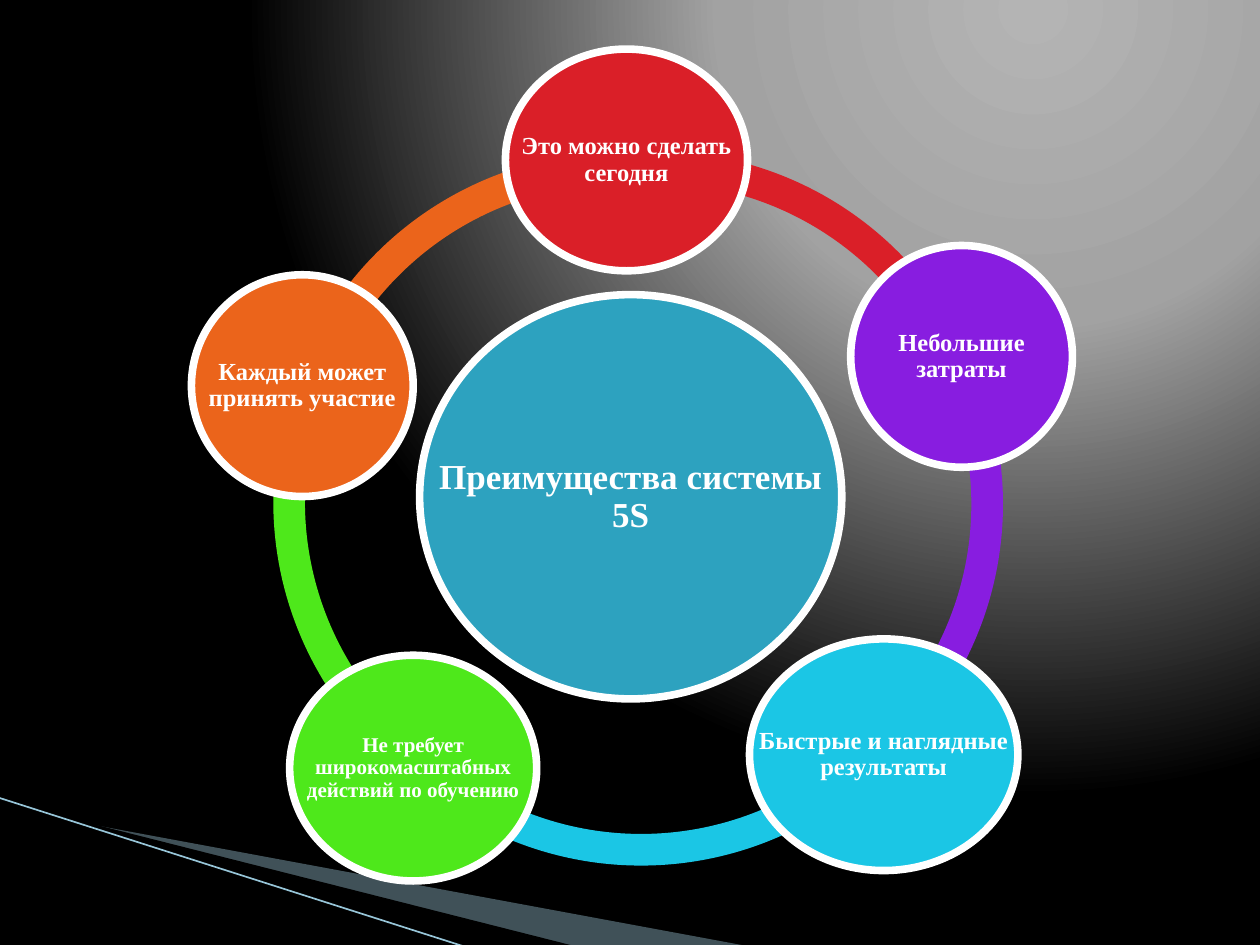
from lxml import etree
from pptx import Presentation
from pptx.dml.color import RGBColor
from pptx.enum.shapes import MSO_CONNECTOR, MSO_SHAPE
from pptx.enum.text import MSO_ANCHOR, PP_ALIGN
from pptx.oxml import parse_xml
from pptx.oxml.ns import nsdecls, qn
from pptx.util import Cm, Pt

STRAIGHT = MSO_CONNECTOR.STRAIGHT
ELLIPSE = MSO_SHAPE.OVAL
BLOCK_ARC = MSO_SHAPE.BLOCK_ARC
MIDDLE = MSO_ANCHOR.MIDDLE
CENTER = PP_ALIGN.CENTER

WHITE = RGBColor(0xFF, 0xFF, 0xFF)
BLACK = RGBColor(0x00, 0x00, 0x00)
RED = RGBColor(0xDA, 0x1F, 0x28)
PURPLE = RGBColor(0x88, 0x1D, 0xE0)
CYAN = RGBColor(0x1B, 0xC6, 0xE5)
GREEN = RGBColor(0x4E, 0xE8, 0x1B)
ORANGE = RGBColor(0xEB, 0x64, 0x1B)
TEAL = RGBColor(0x2D, 0xA2, 0xBF)
PALE_BLUE = RGBColor(0xA0, 0xCB, 0xDC)
LINE_BLUE = RGBColor(0x97, 0xC5, 0xD8)


class RingSlide:
    """Holds the slide and the style of the ring diagram."""

    font_name = "Times New Roman"
    outline = Pt(4.33)
    arc_size = Cm(13.87)
    arc_thickness = 0.046

    def __init__(self, slide):
        self.slide = slide
        self.shapes = slide.shapes

    def background(self, stops, left, top, right, bottom):
        """Radial gradient; stops and focus sides are in percent."""
        stop_xml = "".join(
            f'<a:gs pos="{pos * 1000}"><a:srgbClr val="{color}"/></a:gs>'
            for pos, color in stops
        )
        self.slide.element.cSld.insert(0, parse_xml(
            f'<p:bg {nsdecls("p", "a")}><p:bgPr><a:gradFill rotWithShape="1">'
            f'<a:gsLst>{stop_xml}</a:gsLst><a:path path="circle">'
            f'<a:fillToRect l="{left * 1000}" t="{top * 1000}" '
            f'r="{right * 1000}" b="{bottom * 1000}"/></a:path></a:gradFill>'
            '<a:effectLst/></p:bgPr></p:bg>'
        ))

    def paint(self, shape, color):
        shape.shadow.inherit = False
        shape.fill.solid()
        shape.fill.fore_color.rgb = color
        shape.line.fill.background()

    def wedge(self, points, color, opacity=100):
        start, *rest = [(Cm(x), Cm(y)) for x, y in points]
        builder = self.shapes.build_freeform(*start)
        builder.add_line_segments(rest)
        shape = builder.convert_to_shape()
        self.paint(shape, color)
        if opacity < 100:
            rgb = shape.fill._xPr.find(".//" + qn("a:srgbClr"))
            etree.SubElement(rgb, qn("a:alpha"), val=str(opacity * 1000))

    def line(self, x1, y1, x2, y2, color, width):
        line = self.shapes.add_connector(STRAIGHT, Cm(x1), Cm(y1), Cm(x2), Cm(y2))
        line.line.color.rgb = color
        line.line.width = Pt(width)
        etree.SubElement(line.element.spPr, qn("a:effectLst"))

    def arc(self, left, top, start, end, color):
        """Ring segment between two angles in degrees."""
        arc = self.shapes.add_shape(
            BLOCK_ARC, Cm(left), Cm(top), self.arc_size, self.arc_size)
        # One adjustment unit is 100000 / 60000 of a degree
        for i, value in enumerate((start * 0.6, end * 0.6, self.arc_thickness)):
            arc.adjustments[i] = value
        self.paint(arc, color)

    def node(self, text, box, color, size=14, inset=0.05):
        """Outlined ellipse with a label that may use its full width."""
        bounds = [Cm(length) for length in box]
        ellipse = self.shapes.add_shape(ELLIPSE, *bounds)
        self.paint(ellipse, color)
        ellipse.line.color.rgb = WHITE
        ellipse.line.width = self.outline

        frame = self.shapes.add_textbox(*bounds).text_frame
        frame.word_wrap = True
        frame.vertical_anchor = MIDDLE
        frame.margin_left = frame.margin_right = Cm(inset)
        frame.margin_top = frame.margin_bottom = Cm(inset)
        label = frame.paragraphs[0]
        label.text = text
        label.alignment = CENTER
        label.line_spacing = 0.9
        label.font.name = self.font_name
        label.font.size = Pt(size)
        label.font.bold = True
        label.font.color.rgb = WHITE


def main():
    prs = Presentation()
    prs.slide_width, prs.slide_height = Cm(25.4), Cm(19.05)
    ring = RingSlide(prs.slides.add_slide(prs.slide_layouts[6]))

    # Background and corner decoration
    ring.background([(0, "B4B4B4"), (40, "A2A2A2"), (100, "000000")], 65, 0, 0, 98)
    ring.wedge([(1.4, 16.54), (15.11, 19.08), (11.58, 19.08), (1.4, 16.51)],
               PALE_BLUE, opacity=40)
    ring.wedge([(1.35, 16.48), (11.61, 19.08), (9.45, 19.1), (1.37, 16.51)], BLACK)
    ring.line(-0.03, 16.08, 9.42, 19.1, LINE_BLUE, 0.95)

    # Ring segments
    for segment in (
        (5.56, 3.07, 199.15, 271.25, ORANGE),
        (5.51, 3.18, 127.55, 200.23, GREEN),
        (5.99, 3.58, 43.79, 132.76, CYAN),
        (6.35, 3.23, 333.91, 48.09, PURPLE),
        (6.27, 3.05, 265.27, 335.63, RED),
    ):
        ring.arc(*segment)

    # Centre and the advantages around it
    ring.node("Преимущества системы 5S", (8.46, 5.94, 8.51, 8.15), TEAL,
              size=20, inset=0.08)
    ring.node("Это можно сделать сегодня", (10.19, 0.99, 4.88, 4.47), RED)
    ring.node("Небольшие затраты", (17.15, 4.95, 4.47, 4.47), PURPLE)
    ring.node("Быстрые и наглядные результаты", (15.11, 12.88, 5.41, 4.67), CYAN)
    ring.node("Не требует широкомасштабных действий по обучению",
              (5.84, 13.21, 4.98, 4.55), GREEN, size=12)
    ring.node("Каждый может принять участие", (3.86, 5.54, 4.47, 4.47), ORANGE)

    prs.save("out.pptx")


if __name__ == "__main__":
    main()
